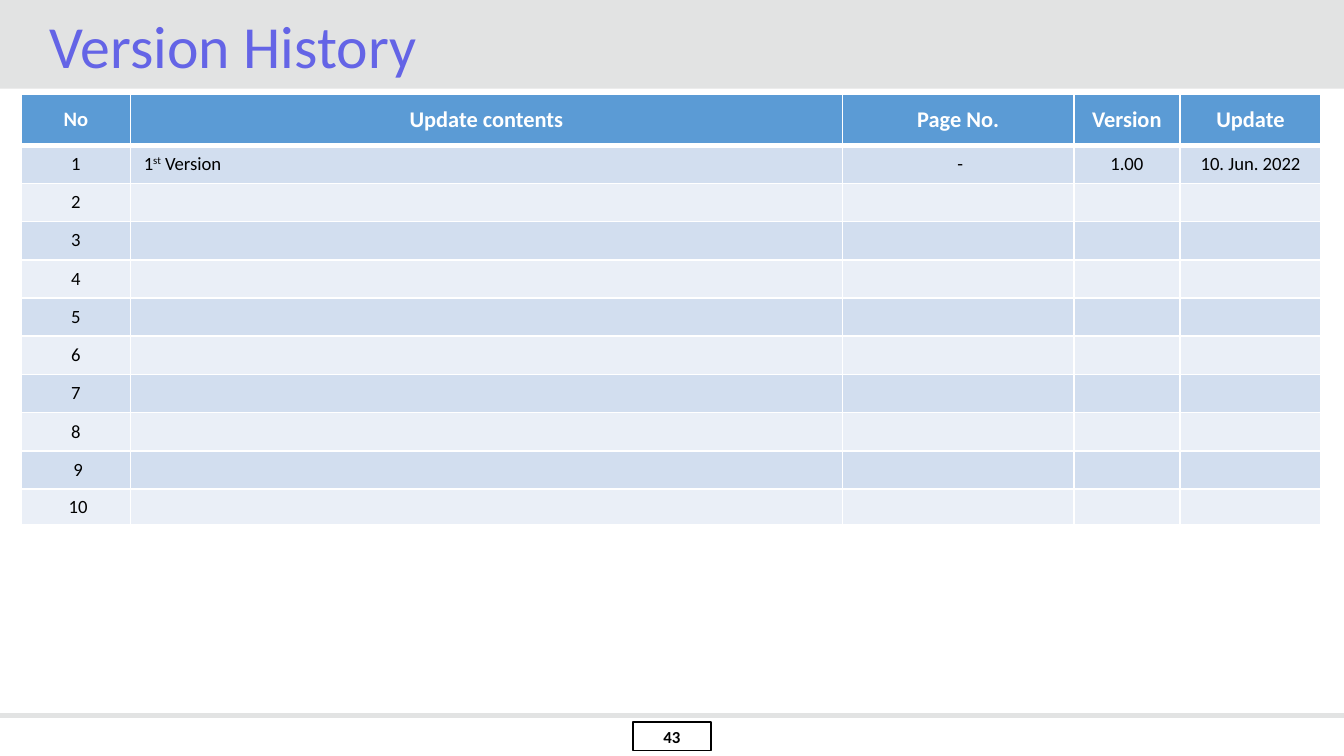
from lxml.etree import SubElement
from pptx import Presentation
from pptx.dml.color import RGBColor
from pptx.enum.shapes import MSO_CONNECTOR, MSO_SHAPE
from pptx.enum.text import MSO_ANCHOR, PP_ALIGN
from pptx.oxml.ns import qn
from pptx.util import Inches, Pt

theme = {
    "font": "Calibri",
    "gray": "E2E3E3", "title": "6464E6", "head": "5B9BD5",
    "bands": ("D2DEEF", "EAEFF7"), "white": "FFFFFF", "black": "000000",
    "big": 32, "mid": 12, "label": 11, "body": 10, "small": 9,
}


def style(run, size, color, bold=False):
    look = {"name": theme["font"], "size": Pt(size), "bold": bold}
    for key, value in look.items():
        setattr(run.font, key, value)
    run.font.color.rgb = RGBColor.from_string(color)


def edge(cell, side, width):
    line = SubElement(cell._tc.get_or_add_tcPr(), qn(f"a:{side}"), w=str(Pt(width)))
    fill = SubElement(line, qn("a:solidFill"))
    SubElement(fill, qn("a:srgbClr"), val=theme["white"])


deck = Presentation()
deck.slide_width = Inches(10)
deck.slide_height = deck.slide_width * 9 // 16
wide, high = deck.slide_width, deck.slide_height
slide = deck.slides.add_slide(deck.slide_layouts[5])
shapes = slide.shapes
bar = Inches(0.66)

band = shapes.add_shape(MSO_SHAPE.RECTANGLE, 0, 0, wide, bar)
band.shadow.inherit = False
band.fill.solid()
band.fill.fore_color.rgb = RGBColor.from_string(theme["gray"])
band.line.fill.background()

foot = high - Inches(0.3)
rule = shapes.add_connector(MSO_CONNECTOR.STRAIGHT, 0, foot, wide, foot)
rule.line.color.rgb = RGBColor.from_string(theme["gray"])
rule.line.width = Pt(3)
SubElement(rule.element.spPr, qn("a:effectLst"))

span = Inches(0.58)
page = shapes.add_shape(
    MSO_SHAPE.RECTANGLE, (wide - span) // 2, foot + Inches(0.05), span, Inches(0.21))
page.shadow.inherit = False
page.fill.background()
page.line.color.rgb = RGBColor.from_string(theme["black"])
page.line.width = Pt(1)
frame = page.text_frame
for side in ("left", "top", "right", "bottom"):
    setattr(frame, f"margin_{side}", Inches(0.03))
frame.vertical_anchor = MSO_ANCHOR.MIDDLE
para = frame.paragraphs[0]
para.alignment = PP_ALIGN.CENTER
run = para.add_run()
run.text = "43"
style(run, theme["small"], theme["black"], True)

title = shapes.title
inset = Inches(0.27)
place = {"left": inset, "top": Inches(0.01), "width": wide - 2 * inset, "height": bar}
for key, value in place.items():
    setattr(title, key, value)
title.element.getparent().append(title.element)
frame = title.text_frame
look = {"margin_left": Inches(0.1), "margin_right": Inches(0.1),
        "margin_top": Inches(0.05), "margin_bottom": 0,
        "vertical_anchor": MSO_ANCHOR.MIDDLE, "word_wrap": True}
for key, value in look.items():
    setattr(frame, key, value)
para = frame.paragraphs[0]
para.alignment = PP_ALIGN.LEFT
para.line_spacing = 0.9
run = para.add_run()
run.text = "Version History"
style(run, theme["big"], theme["title"])

heads = ["No", "Update contents", "Page No.", "Version", "Update"]
first = ["1", ("1", "st", " Version"), " -", "1.00", "10. Jun. 2022"]
marks = [*"2345678", " 9", " 10"]
rows = [heads, first] + [[mark, "", "", "", ""] for mark in marks]
cols = [0.81, 5.3, 1.72, 0.79, 1.05]
top, last, full = 0.38, 0.26, 3.2
step = (full - top - last) / (len(rows) - 2)
tall = [top] + [step] * (len(rows) - 2) + [last]

table = shapes.add_table(
    len(rows), len(cols), Inches(0.16), Inches(0.7), Inches(sum(cols)), Inches(full)).table
for col, width in zip(table.columns, cols):
    col.width = Inches(width)
for row, height in zip(table.rows, tall):
    row.height = Inches(height)

for r, row in enumerate(rows):
    for c, text in enumerate(row):
        cell = table.cell(r, c)
        for side in ("lnL", "lnR", "lnT", "lnB"):
            thick = (r, side) in ((0, "lnB"), (1, "lnT"))
            edge(cell, side, 3 if thick else 1)
        cell.fill.solid()
        color = theme["bands"][(r - 1) % 2] if r else theme["head"]
        cell.fill.fore_color.rgb = RGBColor.from_string(color)
        cell.vertical_anchor = MSO_ANCHOR.MIDDLE
        para = cell.text_frame.paragraphs[0]
        para.alignment = PP_ALIGN.LEFT if r and c == 1 else PP_ALIGN.CENTER
        size = theme["body"] if r else theme["mid"] if c else theme["label"]
        parts = (text,) if isinstance(text, str) else text
        for part in filter(None, parts):
            run = para.add_run()
            run.text = part
            style(run, size, theme["black" if r else "white"], not r)
            if part == "st":
                run._r.get_or_add_rPr().set("baseline", "30000")
        if not text:
            SubElement(para._p, qn("a:endParaRPr"), sz=str(size * 100))

deck.save("out.pptx")
